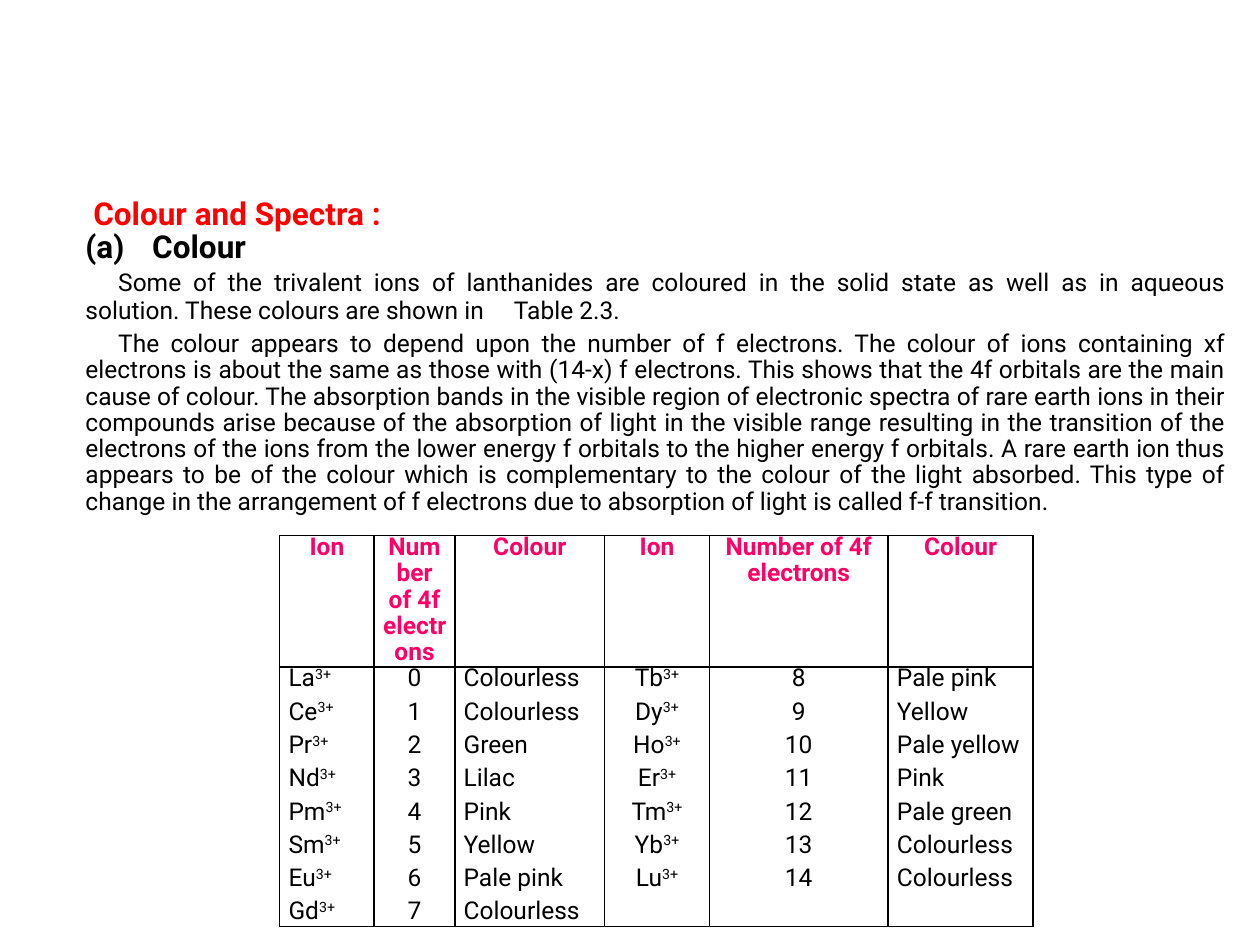
from dataclasses import dataclass
from lxml.etree import SubElement
from pptx import Presentation
from pptx.dml.color import RGBColor as Rgb
from pptx.enum.text import MSO_AUTO_SIZE as AutoSize, PP_ALIGN as Align
from pptx.oxml.ns import qn
from pptx.util import Inches, Pt


@dataclass(frozen=True)
class Theme:
    font: str = "Roboto"
    heading: str = "FF0000"
    header: str = "FF0066"
    ink: str = "000000"
    heading_size: int = 18
    body_size: int = 14
    line_pitch: int = 15
    gap: int = 2
    border: int = 1
    superscript: int = 30
    tabs: tuple = ((0.26, "l"), (0.53, "l"), (4.5, "r"))


class SlideBuilder:
    def __init__(self, slide, theme):
        self.slide = slide
        self.theme = theme

    def paragraph(self, frame, index, align, extra_tabs=()):
        para = frame.paragraphs[0] if index == 0 else frame.add_paragraph()
        para.alignment = align
        para.line_spacing = Pt(self.theme.line_pitch)
        para.space_before = para.space_after = Pt(self.theme.gap)
        stops = SubElement(para._p.get_or_add_pPr(), qn("a:tabLst"))
        for position, side in sorted(self.theme.tabs + tuple(extra_tabs)):
            SubElement(stops, qn("a:tab"), pos=str(Inches(position)), algn=side)
        return para

    def span(self, para, text, size=None, color=None, bold=False, italic=False, raised=False):
        span = para.add_run()
        span.text = text
        font = span.font
        font.name = self.theme.font
        font.size = Pt(size or self.theme.body_size)
        font.color.rgb = Rgb.from_string(color or self.theme.ink)
        font.bold = bold
        font.italic = italic
        if raised:
            span._r.get_or_add_rPr().set("baseline", str(self.theme.superscript * 1000))

    def text_box(self, left, top, width, height):
        box = self.slide.shapes.add_textbox(*map(Inches, (left, top, width, height)))
        frame = box.text_frame
        frame.word_wrap = True
        frame.auto_size = AutoSize.SHAPE_TO_FIT_TEXT
        return frame

    def cell(self, cell):
        cell.margin_left = cell.margin_right = Inches(0.07)
        cell.margin_top = cell.margin_bottom = 0
        properties = cell._tc.get_or_add_tcPr()
        for side in ("lnL", "lnR", "lnT", "lnB"):
            line = SubElement(properties, qn(f"a:{side}"), w=str(Pt(self.theme.border)))
            fill = SubElement(line, qn("a:solidFill"))
            SubElement(fill, qn("a:srgbClr"), val=self.theme.ink)
        cell.fill.background()
        return cell.text_frame

    def table(self, left, top, widths, heights, columns):
        shape = self.slide.shapes.add_table(
            len(heights), len(widths), Inches(left), Inches(top),
            Inches(sum(widths)), Inches(sum(heights)))
        table = shape.table
        table.first_row = table.horz_banding = False
        for row, height in zip(table.rows, heights):
            row.height = Inches(height)
        for number, (width, (title, align, entries)) in enumerate(zip(widths, columns)):
            table.columns[number].width = Inches(width)
            para = self.paragraph(self.cell(table.cell(0, number)), 0, Align.CENTER)
            self.span(para, title, color=self.theme.header, bold=True)
            frame = self.cell(table.cell(1, number))
            for index, entry in enumerate(entries):
                para = self.paragraph(frame, index, align)
                self.span(para, entry)
                if title == "Ion":
                    self.span(para, "3+", raised=True)


INTRO = (
    "Some of the trivalent ions of lanthanides are coloured in the solid state as well as "
    "in aqueous solution. These colours are shown in\tTable 2.3."
)
EXPLANATION = (
    "The colour appears to depend upon the number of f electrons. The colour of ions "
    "containing xf electrons is about the same as those with (14-x) f electrons. This shows "
    "that the 4f orbitals are the main cause of colour. The absorption bands in the visible "
    "region of electronic spectra of rare earth ions in their compounds arise because of the "
    "absorption of light in the visible range resulting in the transition of the electrons of "
    "the ions from the lower energy f orbitals to the higher energy f orbitals. A rare earth "
    "ion thus appears to be of the colour which is complementary to the colour of the light "
    "absorbed. This type of change in the arrangement of f electrons due to absorption of "
    "light is called f-f transition."
)
LIGHT_IONS = ("La", "Ce", "Pr", "Nd", "Pm", "Sm", "Eu", "Gd")
HEAVY_IONS = ("Tb", "Dy", "Ho", "Er", "Tm", "Yb", "Lu")
LIGHT_COLOURS = ("Colourless", "Colourless", "Green", "Lilac", "Pink", "Yellow",
                 "Pale pink", "Colourless")
HEAVY_COLOURS = ("Pale pink", "Yellow", "Pale yellow", "Pink", "Pale green",
                 "Colourless", "Colourless")
ELECTRONS = "Number of 4f electrons"
COLUMNS = (
    ("Ion", Align.JUSTIFY, LIGHT_IONS),
    (ELECTRONS, Align.CENTER, map(str, range(8))),
    ("Colour", Align.JUSTIFY, LIGHT_COLOURS),
    ("Ion", Align.CENTER, HEAVY_IONS),
    (ELECTRONS, Align.CENTER, map(str, range(8, 15))),
    ("Colour", Align.JUSTIFY, HEAVY_COLOURS),
)


def main():
    deck = Presentation()
    deck.slide_width, deck.slide_height = Inches(10), Inches(7.5)
    theme = Theme()
    page = SlideBuilder(deck.slides.add_slide(deck.slide_layouts[6]), theme)

    frame = page.text_box(0.58, 1.58, 9.25, 2.58)
    headings = ((" Colour and Spectra :", theme.heading), ("(a)\tColour ", theme.ink))
    for index, (text, color) in enumerate(headings):
        para = page.paragraph(frame, index, Align.JUSTIFY)
        page.span(para, text, theme.heading_size, color, bold=True)

    bodies = ((INTRO, theme.heading_size, False, ((3.4, "l"),)),
              (EXPLANATION, theme.body_size, True, ()))
    for index, (text, tab_size, italic, stops) in enumerate(bodies, len(headings)):
        para = page.paragraph(frame, index, Align.JUSTIFY, stops)
        page.span(para, "\t", tab_size, italic=italic)
        page.span(para, text)

    page.table(2.22, 4.25, (0.75, 0.64, 1.19, 0.83, 1.42, 1.15), (1.04, 2.06), COLUMNS)
    deck.save("out.pptx")


if __name__ == "__main__":
    main()
